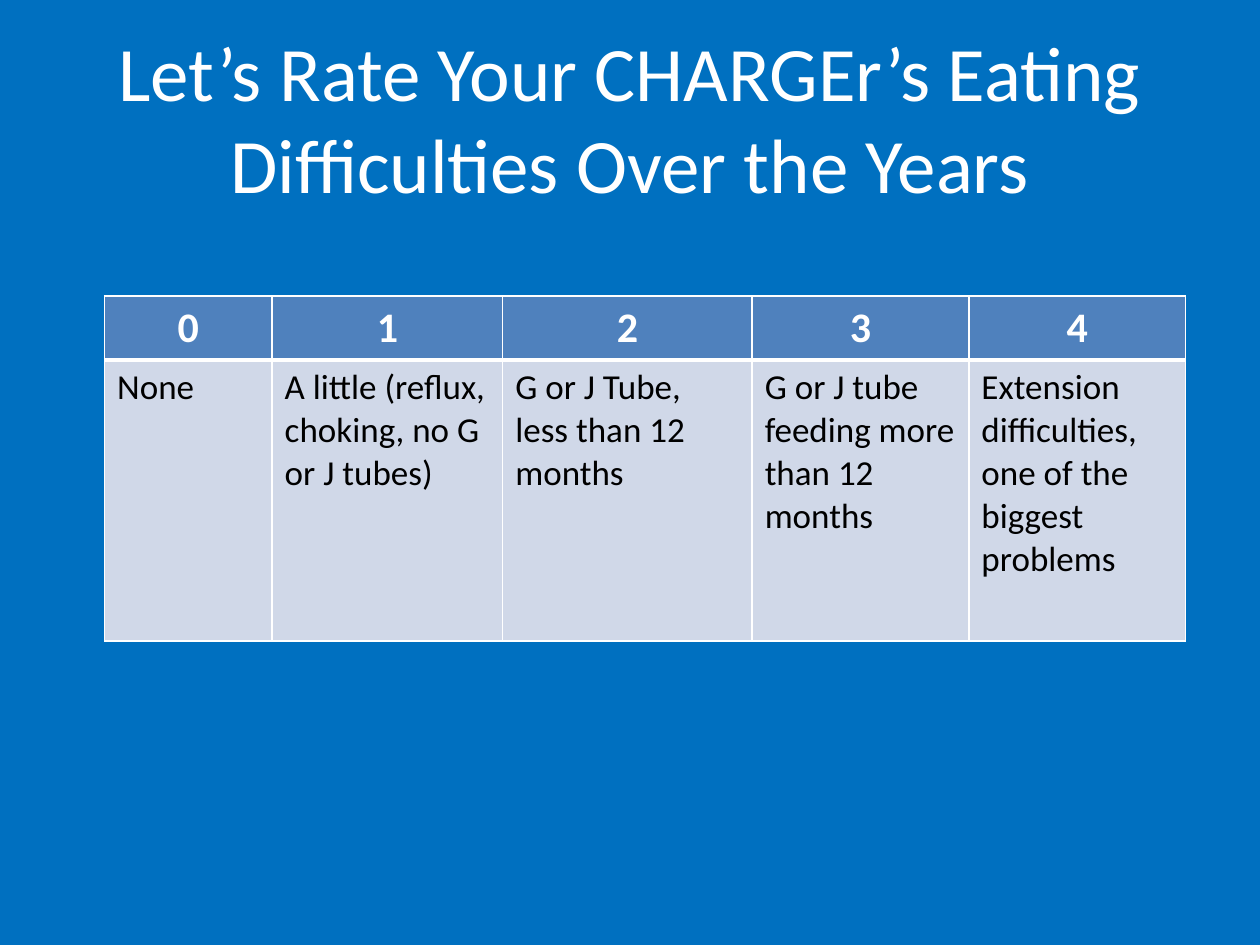
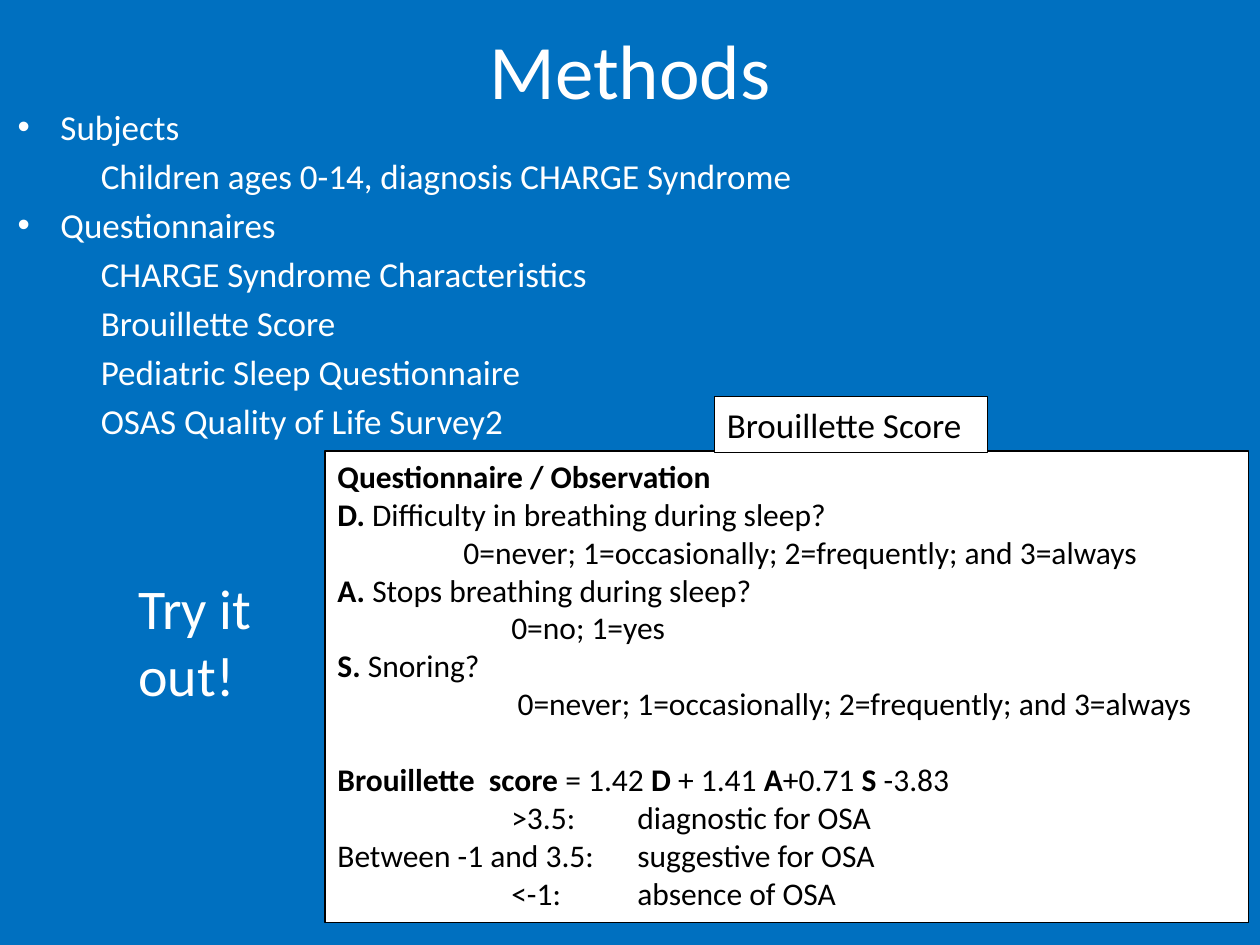
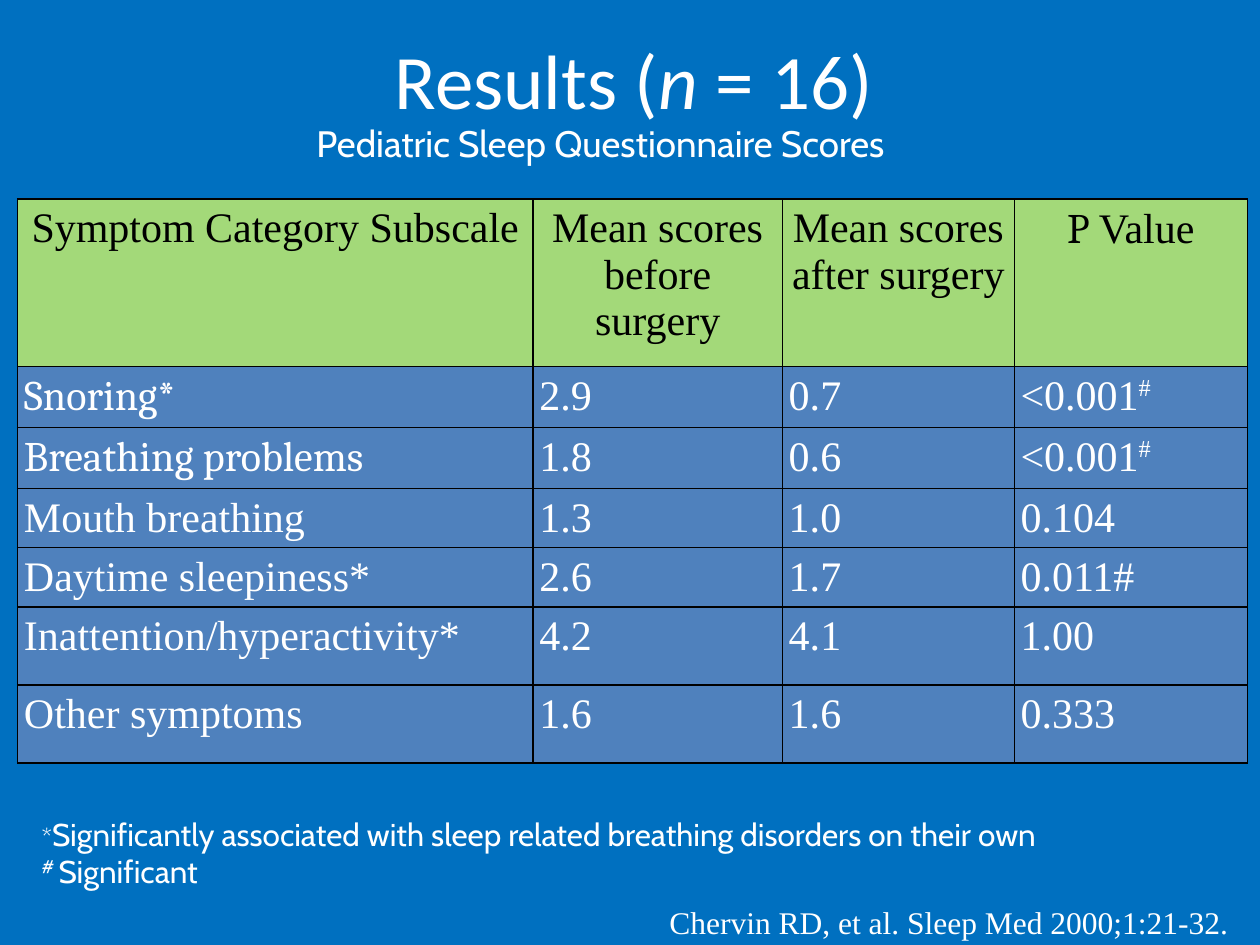
"""Build three slides on eating difficulties, study methods and sleep results."""
import dataclasses

import lxml.etree
import pptx
import pptx.dml.color
import pptx.enum.shapes
import pptx.enum.text
import pptx.oxml.ns
import pptx.util

Inches = pptx.util.Inches
Pt = pptx.util.Pt
qn = pptx.oxml.ns.qn
ALIGN = pptx.enum.text.PP_ALIGN
ANCHOR = pptx.enum.text.MSO_ANCHOR


@dataclasses.dataclass(frozen=True)
class Theme:
    """Colours, fonts and type sizes shared by all slides."""
    blue: str = "0070C0"
    white: str = "FFFFFF"
    black: str = "000000"
    steel: str = "4F81BD"
    pale: str = "D0D8E8"
    green: str = "A3D979"
    sans: str = "Calibri"
    accent: str = "Cabin"
    serif: str = "Times New Roman"
    slab: str = "Cambria"
    title: int = 44
    callout: int = 32
    header: int = 24
    subtitle: int = 21
    body: int = 20
    small: int = 18
    mark: int = 14


THEME = Theme()
BOLD = {"bold": True}
RAISED = {"raised": 32}
SLAB = {"font": THEME.slab}
NO_INSETS = (0, 0, 0, 0)
NARROW_RIGHT = (0.1, 0.05, 0.04, 0.05)
CELL_INSETS = (0.05, 0.05, 0.05, 0.05)

RATINGS = [
    ("0", "None"),
    ("1", "A little (reflux, choking, no G or J tubes)"),
    ("2", "G or J Tube, less than 12 months"),
    ("3", "G or J tube feeding more than 12 months"),
    ("4", "Extension difficulties, one of the biggest problems"),
]
RATING_COLUMNS = [1.33, 1.83, 1.98, 1.72, 1.72]
RATING_ROWS = [0.5, 2.23]

METHODS = [
    ("Subjects", ["Children ages 0-14, diagnosis CHARGE Syndrome"]),
    ("Questionnaires", [
        "CHARGE Syndrome Characteristics",
        "Brouillette Score",
        "Pediatric Sleep Questionnaire",
        "OSAS Quality of Life Survey2",
    ]),
]

SCORE_TABS = [1.38, 2.38]
SCORE_LINES = [
    ([], [("Questionnaire / Observation", BOLD)]),
    ([], [("D.", BOLD), " Difficulty in breathing during sleep?"]),
    ([1], ["\t0=never; 1=occasionally; 2=frequently; and 3=always"]),
    ([], [("A. ", BOLD), "Stops breathing during sleep?"]),
    (SCORE_TABS, ["\t0=no; 1=yes"]),
    ([], [("S. ", BOLD), "Snoring?"]),
    ([1.43], ["\t0=never; 1=occasionally; 2=frequently; and 3=always"]),
    ([], [("Brouillette  score", BOLD), " = 1.42 ", ("D", BOLD), " + 1.41 ",
          ("A", BOLD), "+0.71 ", ("S ", BOLD), "-3.83"]),
    (SCORE_TABS, ["\t>3.5:\tdiagnostic for OSA"]),
    (SCORE_TABS[1:], ["Between -1 and 3.5:\tsuggestive for OSA"]),
    (SCORE_TABS, ["\t<-1:\tabsence of OSA"]),
]
FORMULA_LINE = 7

RESULTS = [
    ["Symptom Category Subscale", "Mean scores before surgery",
     "Mean scores after surgery", [("P ", SLAB), "Value"]],
    [[("Snoring*", SLAB)], "2.9", "0.7", ["<0.001", ("#", RAISED)]],
    [[("Breathing problems", SLAB)], "1.8", "0.6", ["<0.001", ("#", RAISED)]],
    ["Mouth breathing", "1.3", "1.0", "0.104"],
    ["Daytime sleepiness*", "2.6", "1.7", "0.011#"],
    ["Inattention/hyperactivity*", "4.2", "4.1", "1.00"],
    ["Other symptoms", "1.6", "1.6", "0.333"],
]
RESULT_COLUMNS = [4.09, 1.98, 1.84, 1.85]
RESULT_ROWS = [1.33, 0.48, 0.48, 0.47, 0.47, 0.62, 0.62]

FOOTNOTES = [
    [("*", {"size": THEME.mark}),
     "Significantly associated with sleep related breathing disorders on their own"],
    [("# ", RAISED), "Significant"],
]


def rgb(code):
    """Turn a hex code into a colour."""
    return pptx.dml.color.RGBColor.from_string(code)


def write(para, parts, size, color=THEME.white, font=THEME.sans, align=None):
    """Fill a paragraph with plain or styled parts."""
    para.alignment = align
    for part in [parts] if isinstance(parts, str) else parts:
        text, style = (part, {}) if isinstance(part, str) else part
        span = para.add_run()
        span.text = text
        span.font.size = Pt(style.get("size", size))
        span.font.name = style.get("font", font)
        span.font.color.rgb = rgb(color)
        span.font.bold = style.get("bold", False)
        span.font.italic = style.get("italic", False)
        if "raised" in style:
            span._r.get_or_add_rPr().set("baseline", str(style["raised"] * 1000))


def paragraphs(frame, count):
    """Return the first paragraph and as many new ones as needed."""
    return [frame.paragraphs[0]] + [frame.add_paragraph() for _ in range(count - 1)]


def set_insets(target, insets):
    """Set the four margins of a frame or cell."""
    for side, inset in zip(("left", "top", "right", "bottom"), insets):
        setattr(target, f"margin_{side}", Inches(inset))


def place(box, at):
    """Move and size a shape."""
    box.left, box.top, box.width, box.height = map(Inches, at)


def prepare(frame, anchor, insets=None):
    """Set wrapping, anchor and margins of a text frame."""
    frame.word_wrap = True
    frame.auto_size = pptx.enum.text.MSO_AUTO_SIZE.NONE
    frame.vertical_anchor = anchor
    if insets:
        set_insets(frame, insets)
    return frame


def add_page(deck, layout, title, at, insets=None):
    """Add a slide with a centred white title."""
    page = deck.slides.add_slide(deck.slide_layouts[layout])
    place(page.shapes.title, at)
    frame = prepare(page.shapes.title.text_frame, ANCHOR.MIDDLE, insets)
    write(frame.paragraphs[0], title, THEME.title, align=ALIGN.CENTER)
    return page


def add_text(page, at, lines, size, font=THEME.sans, align=None,
             anchor=ANCHOR.MIDDLE, insets=NO_INSETS):
    """Add a text box and return its paragraphs."""
    box = page.shapes.add_textbox(*map(Inches, at))
    frame = prepare(box.text_frame, anchor, insets)
    paras = paragraphs(frame, len(lines))
    for para, parts in zip(paras, lines):
        write(para, parts, size, font=font, align=align)
    return paras


def add_panel(page, at):
    """Add a white outlined rectangle and return its text frame."""
    panel = page.shapes.add_shape(
        pptx.enum.shapes.MSO_SHAPE.RECTANGLE, *map(Inches, at))
    panel.shadow.inherit = False
    panel.fill.solid()
    panel.fill.fore_color.rgb = rgb(THEME.white)
    panel.line.color.rgb = rgb(THEME.black)
    panel.line.width = Pt(0.75)
    return prepare(panel.text_frame, ANCHOR.TOP)


def add_tabs(para, stops):
    """Add left tab stops to a paragraph."""
    tabs = lxml.etree.SubElement(para._p.get_or_add_pPr(), qn("a:tabLst"))
    for stop in stops:
        lxml.etree.SubElement(tabs, qn("a:tab"), pos=str(Inches(stop)), algn="l")


def style_cell(cell, fill, border, widths):
    """Draw the left, right, top and bottom borders, then the fill."""
    properties = cell._tc.get_or_add_tcPr()
    for side, width in zip("LRTB", widths):
        line = lxml.etree.SubElement(properties, qn(f"a:ln{side}"), w=str(Pt(width)))
        solid = lxml.etree.SubElement(line, qn("a:solidFill"))
        lxml.etree.SubElement(solid, qn("a:srgbClr"), val=border)
    cell.fill.solid()
    cell.fill.fore_color.rgb = rgb(fill)


def add_grid(page, left, top, columns, heights, rows, draw_cell):
    """Add a table and draw each cell by its row number and content."""
    table = page.shapes.add_table(
        len(heights), len(columns), Inches(left), Inches(top),
        Inches(sum(columns)), Inches(sum(heights))).table
    for column, width in zip(table.columns, columns):
        column.width = Inches(width)
    for row, height in zip(table.rows, heights):
        row.height = Inches(height)
    for row_number, row in enumerate(rows):
        for column_number, content in enumerate(row):
            draw_cell(table.cell(row_number, column_number), row_number, content)


def draw_rating(cell, row_number, content):
    """Draw one cell of the rating scale."""
    para = cell.text_frame.paragraphs[0]
    if row_number == 0:
        style_cell(cell, THEME.steel, THEME.white, (1, 1, 1, 3))
        write(para, [(content, BOLD)], THEME.header, align=ALIGN.CENTER)
    else:
        style_cell(cell, THEME.pale, THEME.white, (1, 1, 3, 1))
        write(para, content, THEME.body, THEME.black)


def draw_result(cell, row_number, content):
    """Draw one cell of the score table."""
    fill, color, align = ((THEME.steel, THEME.white, None) if row_number
                          else (THEME.green, THEME.black, ALIGN.CENTER))
    style_cell(cell, fill, THEME.black, (1, 1, 1, 1))
    set_insets(cell, CELL_INSETS)
    write(cell.text_frame.paragraphs[0], content, THEME.header, color,
          THEME.serif, align)


def build_ratings(deck):
    """Build the rating scale slide."""
    page = add_page(deck, 5, "Let’s Rate Your CHARGEr’s Eating Difficulties Over the Years",
                    (0.5, 0.3, 9, 1.25))
    add_grid(page, 0.83, 2.35, RATING_COLUMNS, RATING_ROWS, zip(*RATINGS), draw_rating)


def build_methods(deck):
    """Build the methods slide with its score panel."""
    page = add_page(deck, 1, "Methods", (0.5, -0.08, 9, 1.25))
    body = page.placeholders[1]
    place(body, (-0.25, 0.42, 9.28, 3.5))
    frame = prepare(body.text_frame, ANCHOR.MIDDLE, NARROW_RIGHT)
    items = [(level, text) for heading, details in METHODS
             for level, text in [(0, heading)] + [(1, detail) for detail in details]]
    for para, (level, text) in zip(paragraphs(frame, len(items)), items):
        para.level = level
        margin, indent = (0.94, 0.01) if level else (0.63, -0.34)
        properties = para._p.get_or_add_pPr()
        properties.set("marL", str(Inches(margin)))
        properties.set("indent", str(Inches(indent)))
        if level:
            lxml.etree.SubElement(properties, qn("a:buNone"))
        write(para, text, THEME.body)
    frame.paragraphs[0].space_before = Pt(0)

    panel = add_panel(page, (2.58, 3.58, 7.33, 3.74))
    paras = paragraphs(panel, len(SCORE_LINES))
    for para, (stops, parts) in zip(paras, SCORE_LINES):
        if stops:
            add_tabs(para, stops)
        write(para, parts, THEME.small, THEME.black, align=ALIGN.LEFT)
    paras[FORMULA_LINE].space_before = Pt(22)

    label = add_panel(page, (5.67, 3.15, 2.17, 0.44))
    write(label.paragraphs[0], "Brouillette Score", THEME.body, THEME.black,
          align=ALIGN.LEFT)
    add_text(page, (1, 4.5, 1.33, 1.18), ["Try it out!"], THEME.callout,
             anchor=ANCHOR.TOP, insets=(0.1, 0.05, 0.1, 0.05))


def build_results(deck):
    """Build the results slide."""
    page = add_page(deck, 5, ["Results (", ("n", {"italic": True}), " = 16)"],
                    (0.5, 0, 9, 1.25), NARROW_RIGHT)
    citation = add_text(page, (4.83, 7, 4.92, 0.33),
                        ["Chervin RD, et al. Sleep Med 2000;1:21-32."],
                        THEME.small, THEME.serif, ALIGN.RIGHT)
    citation[0].line_spacing = 2.0
    add_text(page, (1.92, 0.83, 5.69, 0.6), ["Pediatric Sleep Questionnaire Scores"],
             THEME.subtitle, THEME.accent, ALIGN.CENTER)
    add_grid(page, 0.14, 1.58, RESULT_COLUMNS, RESULT_ROWS, RESULTS, draw_result)
    add_text(page, (0.33, 6.5, 8.58, 0.53), FOOTNOTES, THEME.small, THEME.accent)


def main():
    """Build and save the deck."""
    deck = pptx.Presentation()
    deck.slide_width, deck.slide_height = Inches(10), Inches(7.5)
    background = deck.slide_master.background.fill
    background.solid()
    background.fore_color.rgb = rgb(THEME.blue)
    build_ratings(deck)
    build_methods(deck)
    build_results(deck)
    deck.save("out.pptx")


if __name__ == "__main__":
    main()
